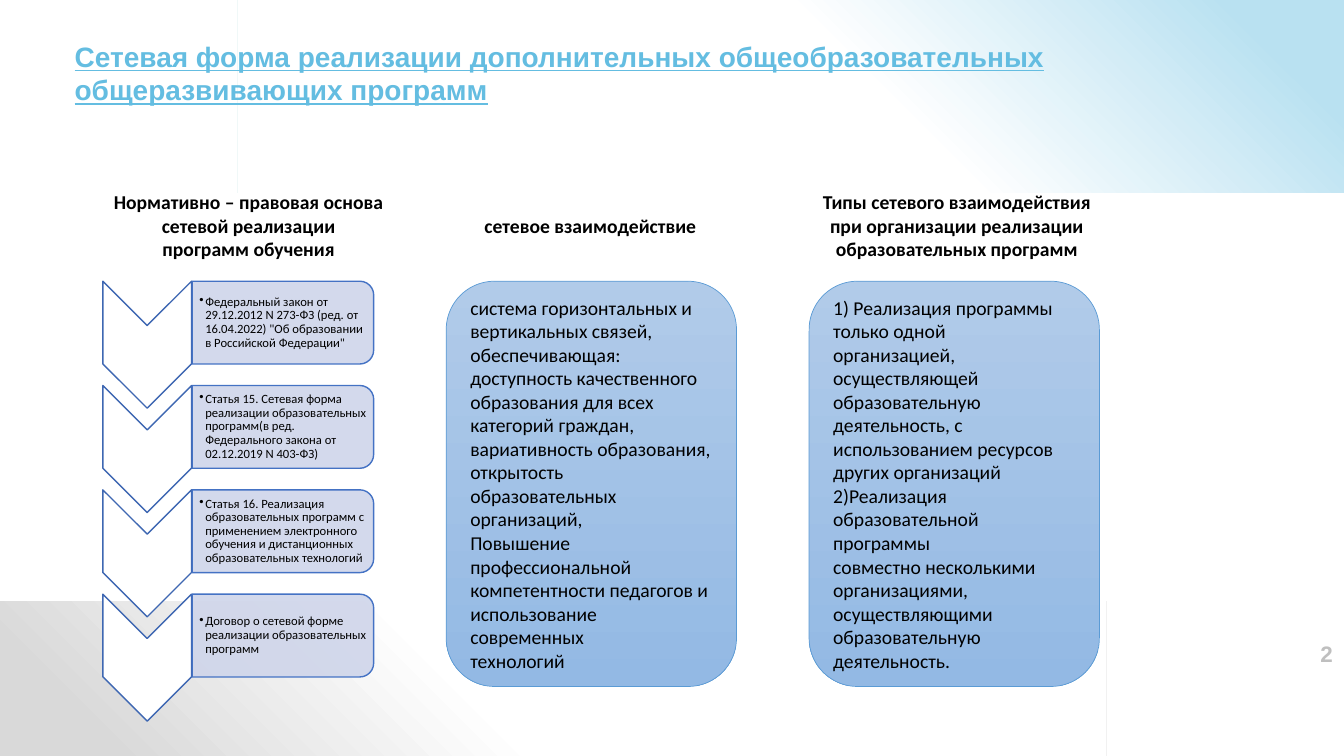
from dataclasses import dataclass

from lxml.etree import SubElement
from pptx import Presentation
from pptx.dml.color import RGBColor
from pptx.enum.shapes import MSO_SHAPE
from pptx.enum.text import MSO_ANCHOR, MSO_AUTO_SIZE, PP_ALIGN
from pptx.oxml.ns import qn
from pptx.util import Inches, Pt


@dataclass(frozen=True)
class Theme:
    """Colours, fonts and type sizes of the slide."""
    heading_font: str = "Arial"
    body_font: str = "Calibri"
    title_size: float = 20
    number_size: float = 16
    body_size: float = 14
    law_size: float = 9
    title: str = "64BDE1"
    number: str = "BFBFBF"
    text: str = "000000"
    white: str = "FFFFFF"
    sky: str = "B9E1F1"
    grey: str = "D9D9D9"
    chevron_line: str = "3E67B2"
    card: str = "CFD5EA"
    card_line: str = "4472C4"
    panel_top: str = "B1CBE9"
    panel_bottom: str = "93B9E4"
    panel_line: str = "5B9BD5"


class SlideBuilder:
    """Draws elements whose boxes are percentages of the slide's size."""

    def __init__(self, deck, theme):
        """Add a title-only slide to the deck."""
        self.theme = theme
        self.width, self.height = deck.slide_width, deck.slide_height
        self.slide = deck.slides.add_slide(deck.slide_layouts[5])

    def frame(self, box):
        """Turn a box of percentages into slide lengths."""
        left, top, width, height = box
        return (int(self.width * left / 100), int(self.height * top / 100),
                int(self.width * width / 100), int(self.height * height / 100))

    def set_text(self, frame, text, size, color=None, font=None, bold=False,
                 underline=None, align=PP_ALIGN.LEFT, anchor=MSO_ANCHOR.TOP):
        """Fill a text frame and format its runs."""
        frame.text = text
        frame.vertical_anchor = anchor
        for paragraph in frame.paragraphs:
            paragraph.alignment = align
            for run in paragraph.runs:
                run.font.name = font or self.theme.body_font
                run.font.size = Pt(size)
                run.font.bold = bold
                run.font.underline = underline
                run.font.color.rgb = RGBColor.from_string(color or self.theme.text)

    def title(self, box, text):
        """Place the title placeholder in front of the bands."""
        title = self.slide.shapes.title
        title.left, title.top, title.width, title.height = self.frame(box)
        title.element.getparent().append(title.element)
        title.text_frame.word_wrap = True
        title.text_frame.auto_size = MSO_AUTO_SIZE.NONE
        self.set_text(title.text_frame, text, self.theme.title_size, self.theme.title,
                      self.theme.heading_font, bold=True, underline=True,
                      anchor=MSO_ANCHOR.MIDDLE)

    def label(self, box, text, size, wrap=True, **style):
        """Add a text box and return its text frame."""
        frame = self.slide.shapes.add_textbox(*self.frame(box)).text_frame
        frame.word_wrap = wrap
        self.set_text(frame, text, size, **style)
        return frame

    def shape(self, kind, box, line=None, line_width=1, rotation=0):
        """Add a preset shape that covers the box after its rotation."""
        left, top, width, height = self.frame(box)
        if rotation == 90:
            left, top = left + (width - height) // 2, top + (height - width) // 2
            width, height = height, width
        shape = self.slide.shapes.add_shape(kind, left, top, width, height)
        shape.rotation = rotation
        shape.shadow.inherit = False
        if line:
            shape.line.color.rgb = RGBColor.from_string(line)
            shape.line.width = Pt(line_width)
        else:
            shape.line.fill.background()
        return shape

    def fill(self, shape, color, opacity=100):
        """Give a shape a plain fill."""
        shape.fill.solid()
        shape.fill.fore_color.rgb = RGBColor.from_string(color)
        if opacity < 100:
            tone = shape.element.spPr.find(qn("a:solidFill"))[0]
            SubElement(tone, qn("a:alpha")).set("val", str(opacity * 1000))

    def gradient(self, shape, angle, *stops):
        """Give a shape a two-stop linear gradient."""
        shape.fill.gradient()
        shape.fill.gradient_angle = angle
        for stop, (position, color) in zip(shape.fill.gradient_stops, stops):
            stop.position = position
            stop.color.rgb = RGBColor.from_string(color)

    def band(self, box, color, rotation=0):
        """Add a corner band that fades to white."""
        band = self.shape(MSO_SHAPE.RECTANGLE, box, rotation=rotation)
        self.gradient(band, 225, (0.09, color), (0.43, self.theme.white))

    def law(self, top, text):
        """Add a chevron with its bulleted card."""
        chevron = self.shape(MSO_SHAPE.CHEVRON, (7.65, top, 6.6, 16.8),
                             self.theme.chevron_line, rotation=90)
        self.fill(chevron, self.theme.white)
        card = self.shape(MSO_SHAPE.ROUND_2_SAME_RECTANGLE, (14.3, top, 13.5, 10.95),
                          self.theme.card_line, rotation=90)
        self.fill(card, self.theme.card, 90)
        frame = self.label((14.3, top + 0.54, 13.2, 9.87), text,
                           self.theme.law_size, anchor=MSO_ANCHOR.MIDDLE)
        frame.margin_left = Inches(0.07)
        frame.margin_top = frame.margin_right = frame.margin_bottom = Inches(0.01)
        paragraph = frame.paragraphs[0]
        paragraph.line_spacing = 0.9
        properties = paragraph._p.get_or_add_pPr()
        properties.set("marL", str(Inches(0.06)))
        properties.set("indent", str(-Inches(0.06)))
        SubElement(properties, qn("a:buChar")).set("char", "•")

    def panel(self, left, text):
        """Add a rounded panel of body text."""
        panel = self.shape(MSO_SHAPE.ROUNDED_RECTANGLE, (left, 37.2, 21.6, 53.6),
                           self.theme.panel_line, 0.5)
        self.gradient(panel, 270, (0, self.theme.panel_top), (1, self.theme.panel_bottom))
        panel.text_frame.word_wrap = True
        self.set_text(panel.text_frame, text, self.theme.body_size,
                      anchor=MSO_ANCHOR.MIDDLE)


LAWS = (
    'Федеральный закон от 29.12.2012 N 273-ФЗ (ред. от 16.04.2022) "Об образовании в Российской Федерации"',
    "Статья 15. Сетевая форма реализации образовательных программ(в ред. Федерального закона от 02.12.2019 N 403-ФЗ)",
    "Статья 16. Реализация образовательных программ с применением электронного обучения и дистанционных образовательных технологий",
    "Договор о сетевой форме реализации образовательных программ",
)
HEADINGS = (
    ((7.65, 24.5, 21.7, 10.8), PP_ALIGN.CENTER, False,
     "Нормативно – правовая основа\nсетевой реализации\nпрограмм обучения"),
    ((35.3, 27.7, 17.6, 4.5), PP_ALIGN.LEFT, True, "сетевое взаимодействие"),
    ((58.4, 24.5, 25.6, 10.8), PP_ALIGN.CENTER, True,
     "Типы сетевого взаимодействия\nпри организации реализации\nобразовательных программ"),
)
PANELS = (
    (33.2, "система горизонтальных и вертикальных связей, обеспечивающая: "
           "доступность качественного образования для всех категорий граждан, "
           "вариативность образования,\n"
           "открытость образовательных организаций,\n"
           "Повышение профессиональной компетентности педагогов и использование современных\n"
           "технологий"),
    (60.2, "1) Реализация программы только одной\n"
           "организацией, осуществляющей\n"
           "образовательную деятельность, с\n"
           "использованием ресурсов других организаций 2)Реализация образовательной программы\n"
           "совместно несколькими организациями,\n"
           "осуществляющими образовательную\n"
           "деятельность."),
)


def main():
    """Build the slide and save it."""
    deck = Presentation()
    deck.slide_width, deck.slide_height = Inches(13.33), Inches(7.5)
    theme = Theme()
    page = SlideBuilder(deck, theme)
    page.band((17.7, 0, 82.3, 25.5), theme.sky)
    page.band((0, 79.5, 82.3, 20.5), theme.grey, rotation=180)
    page.label((93.9, 83.7, 6, 5.5), "2", theme.number_size, color=theme.number,
               font=theme.heading_font, bold=True, align=PP_ALIGN.RIGHT,
               anchor=MSO_ANCHOR.MIDDLE)
    page.title((4.8, 4.5, 81.8, 10.3),
               "Сетевая форма реализации дополнительных общеобразовательных\n"
               "общеразвивающих программ")
    for row, law in enumerate(LAWS):
        page.law(37.2 + 13.8 * row, law)
    for box, align, wrap, heading in HEADINGS:
        page.label(box, heading, theme.body_size, wrap, bold=True, align=align)
    for left, body in PANELS:
        page.panel(left, body)
    deck.save("out.pptx")


if __name__ == "__main__":
    main()
